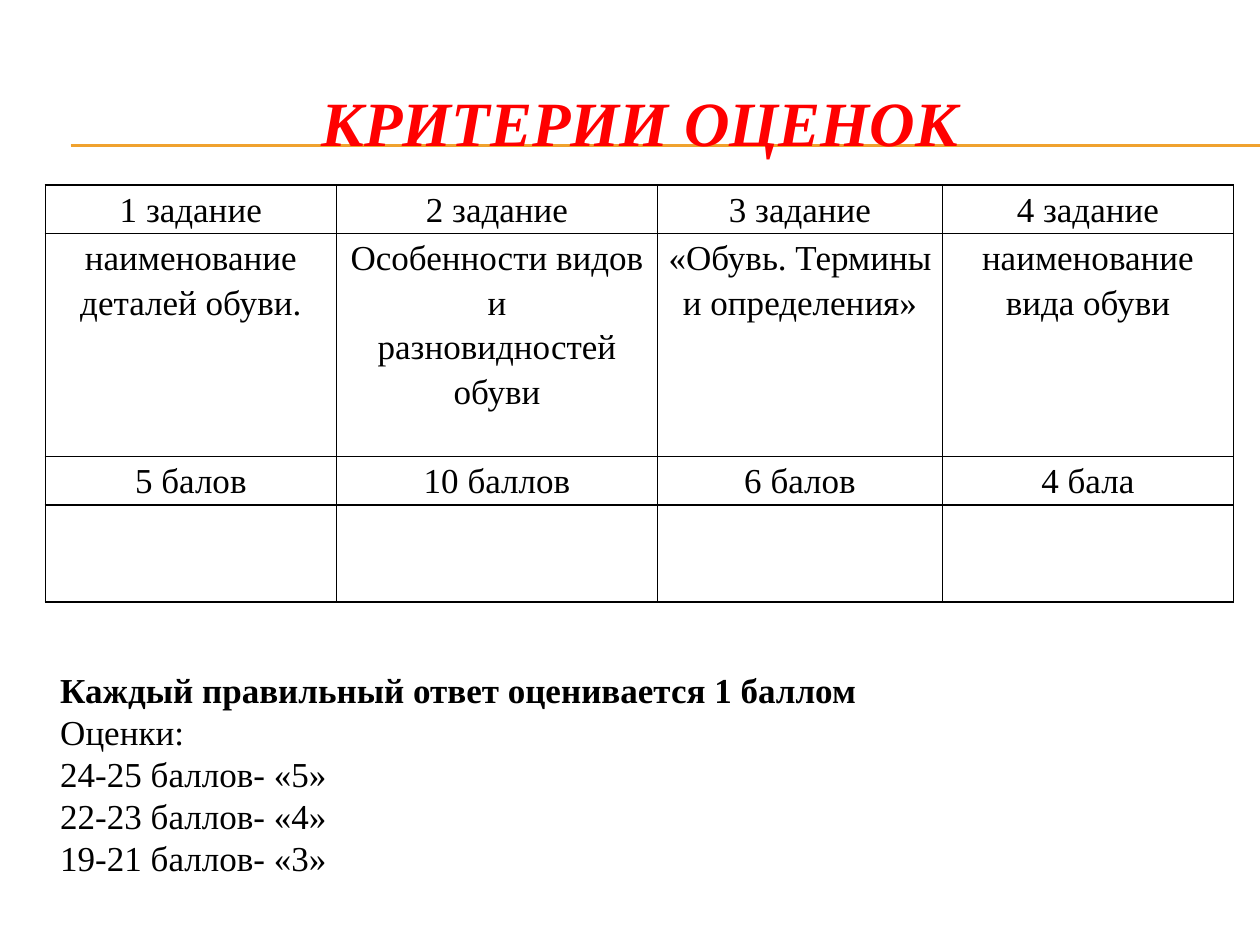
from lxml import etree
from pptx import Presentation
from pptx.dml.color import RGBColor
from pptx.enum import shapes, text
from pptx.oxml import ns
from pptx.util import Inches, Pt

FONT = "Times New Roman"
BLACK, RED, ORANGE = "000000", "FF0000", "F0A22E"

TITLE = "КРИТЕРИИ ОЦЕНОК"
RULE_HEIGHTS = [1.15, 1.16]
COLUMN_WIDTHS = [2.31, 2.55, 2.26, 2.31]
ROW_HEIGHTS = [0.38, 1.77, 0.38, 0.77]
TASKS = [
    ["1 задание", "2 задание", "3 задание", "4 задание"],
    ["наименование деталей обуви.",
     "Особенности видов и\nразновидностей обуви",
     "«Обувь. Термины и определения»",
     "наименование вида обуви"],
    ["5 балов", "10 баллов", "6 балов", "4 бала"],
    ["", "", "", ""],
]
SCORING_RULE = "Каждый правильный ответ оценивается 1 баллом"
GRADES = ["Оценки:", "24-25 баллов- «5»", "22-23 баллов- «4»", "19-21 баллов- «3»"]


def color(value):
    return RGBColor.from_string(value)


def write(paragraph, content, size=20, fill=BLACK, bold=False, italic=False,
          align=text.PP_ALIGN.LEFT, spacing=None, first_indent=0):
    paragraph.text = content
    paragraph.alignment = align
    paragraph.line_spacing = spacing
    if first_indent:
        properties = paragraph._p.get_or_add_pPr()
        properties.set("marL", "0")
        properties.set("indent", str(Inches(first_indent)))
    font = paragraph.font
    font.name, font.size, font.bold, font.italic = FONT, Pt(size), bold, italic
    font.color.rgb = color(fill)


def add_paragraphs(frame, lines):
    """Return one paragraph of the frame for each line."""
    return [frame.paragraphs[0]] + [frame.add_paragraph() for _ in lines[1:]]


def add_text_box(slide, left, top, width, height):
    frame = slide.shapes.add_textbox(
        Inches(left), Inches(top), Inches(width), Inches(height)).text_frame
    frame.word_wrap = True
    frame.vertical_anchor = text.MSO_ANCHOR.MIDDLE
    return frame


def add_rule(slide, y):
    rule = slide.shapes.add_connector(
        shapes.MSO_CONNECTOR.STRAIGHT, Inches(0.56), Inches(y), Inches(10), Inches(y))
    rule.line.color.rgb = color(ORANGE)
    rule.line.width = Pt(0.75)
    etree.SubElement(rule._element.spPr, ns.qn("a:effectLst"))


def add_borders(cell):
    properties = cell._tc.get_or_add_tcPr()
    for position, side in enumerate(("lnL", "lnR", "lnT", "lnB")):
        line = etree.Element(ns.qn(f"a:{side}"), w=str(Pt(1)))
        fill = etree.SubElement(line, ns.qn("a:solidFill"))
        etree.SubElement(fill, ns.qn("a:srgbClr"), val=BLACK)
        properties.insert(position, line)


def add_task_table(slide):
    table = slide.shapes.add_table(
        len(ROW_HEIGHTS), len(COLUMN_WIDTHS), Inches(0.36), Inches(1.47),
        Inches(sum(COLUMN_WIDTHS)), Inches(sum(ROW_HEIGHTS))).table
    table.first_row = table.horz_banding = False
    for column, width in zip(table.columns, COLUMN_WIDTHS):
        column.width = Inches(width)
    for row, height, contents in zip(table.rows, ROW_HEIGHTS, TASKS):
        row.height = Inches(height)
        for cell, content in zip(row.cells, contents):
            cell.margin_left = cell.margin_right = Inches(0.07)
            cell.margin_top = cell.margin_bottom = 0
            cell.fill.background()
            add_borders(cell)
            lines = content.split("\n")
            for paragraph, line in zip(add_paragraphs(cell.text_frame, lines), lines):
                write(paragraph, line, align=text.PP_ALIGN.CENTER, spacing=1.15)


def add_grades(slide):
    frame = add_text_box(slide, 0, 5.24, 10, 2.09)
    frame.margin_bottom = Inches(0.34)
    lines = [SCORING_RULE] + GRADES
    for paragraph, line in zip(add_paragraphs(frame, lines), lines):
        write(paragraph, line, bold=line == SCORING_RULE, first_indent=0.38)


def main():
    presentation = Presentation()
    presentation.slide_width, presentation.slide_height = Inches(10), Inches(7.5)
    slide = presentation.slides.add_slide(presentation.slide_layouts[6])
    for y in RULE_HEIGHTS:
        add_rule(slide, y)
    title = add_text_box(slide, 0.33, 0.5, 9.5, 0.92)
    write(title.paragraphs[0], TITLE, size=36, fill=RED, bold=True, italic=True,
          align=text.PP_ALIGN.CENTER)
    add_grades(slide)
    add_task_table(slide)
    presentation.save("out.pptx")


if __name__ == "__main__":
    main()
